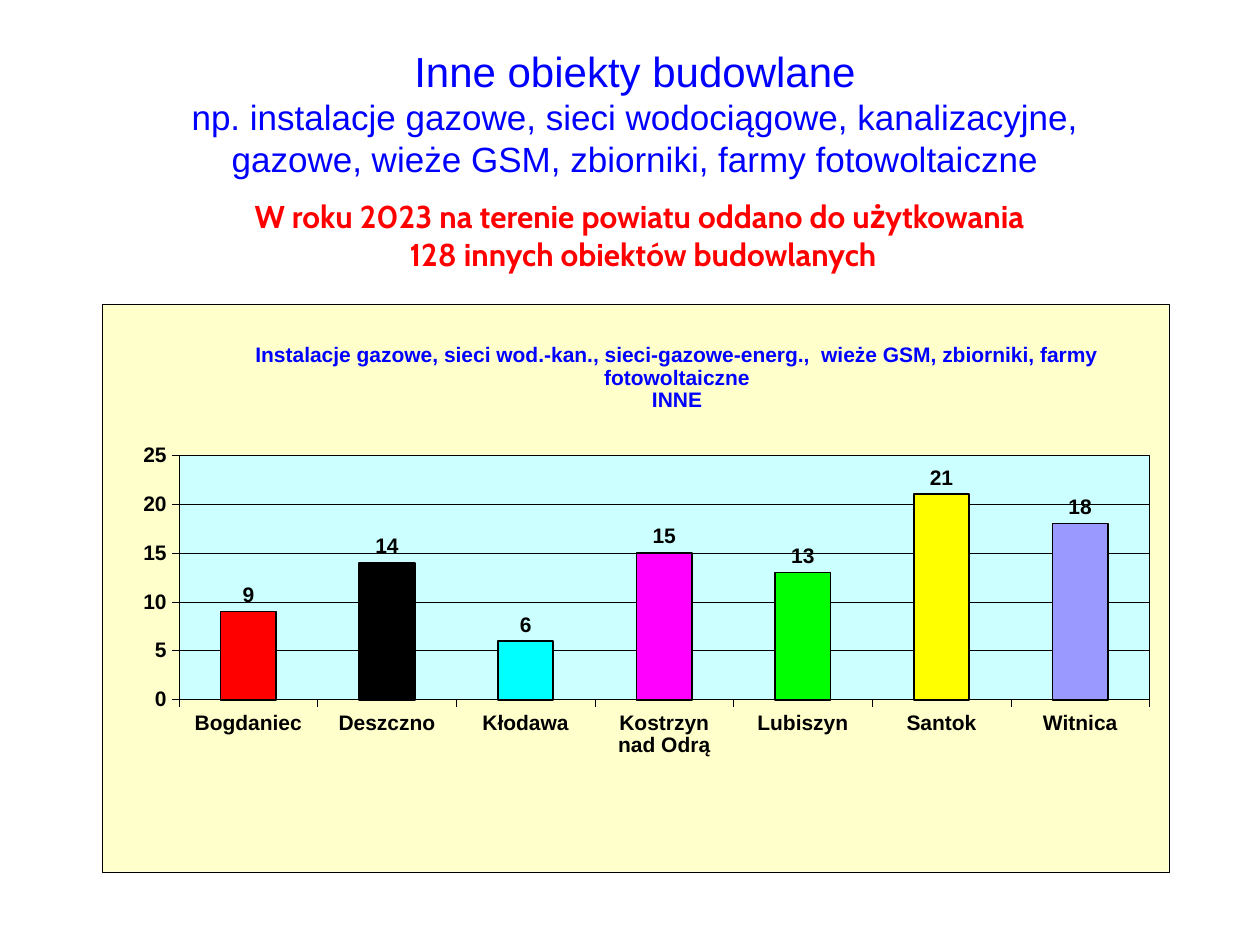
from dataclasses import dataclass

from lxml import etree
from pptx import Presentation
from pptx.chart.data import CategoryChartData
from pptx.dml.color import RGBColor
from pptx.enum.chart import XL_CHART_TYPE, XL_LABEL_POSITION, XL_TICK_MARK
from pptx.enum.text import MSO_ANCHOR, PP_ALIGN
from pptx.oxml import parse_xml
from pptx.oxml.ns import nsdecls, qn
from pptx.util import Pt

COLUMN = XL_CHART_TYPE.COLUMN_CLUSTERED
OUT_END = XL_LABEL_POSITION.OUTSIDE_END
TICK_OUT, TICK_NONE = XL_TICK_MARK.OUTSIDE, XL_TICK_MARK.NONE
MIDDLE, BOTTOM = MSO_ANCHOR.MIDDLE, MSO_ANCHOR.BOTTOM
CENTER = PP_ALIGN.CENTER
SCALE = 914400 / 126


@dataclass(frozen=True)
class Theme:
    sans: str = "Arial"
    accent: str = "Cabin"
    blue: str = "0000FF"
    red: str = "FF0000"
    ink: str = "000000"
    panel: str = "FFFFCC"
    plot: str = "CCFFFF"
    head: int = 24
    sub: int = 20
    title: int = 18
    label: int = 12
    base: int = 10
    hair: float = 0.25
    edge: float = 1


def px(*sizes):
    return [round(size * SCALE) for size in sizes]


def style(font, name, size, color, bold=False):
    font.name, font.size, font.bold = name, Pt(size), bold
    font.color.rgb = RGBColor.from_string(color)


def stroke(line, color, width):
    line.color.rgb = RGBColor.from_string(color)
    line.width = Pt(width)


def fill_xml(fill, line, width):
    return parse_xml(
        f'<c:spPr {nsdecls("c", "a")}>'
        f'<a:solidFill><a:srgbClr val="{fill}"/></a:solidFill>'
        f'<a:ln w="{Pt(width)}"><a:solidFill><a:srgbClr val="{line}"/>'
        '</a:solidFill></a:ln></c:spPr>')


def layout_xml(target=None, **place):
    layout = parse_xml(f'<c:layout {nsdecls("c")}><c:manualLayout/></c:layout>')
    rules = {"layoutTarget": target} if target else {}
    rules |= {"xMode": "edge", "yMode": "edge"} | place
    for tag, val in rules.items():
        etree.SubElement(layout[0], qn(f"c:{tag}")).set("val", str(val))
    return layout


def drop(parent, tag):
    for child in parent.findall(qn(tag)):
        parent.remove(child)


class Deck:
    def __init__(self, theme):
        self.theme = theme
        self.prs = Presentation()
        self.prs.slide_width, self.prs.slide_height = px(1260, 945)
        self.slide = self.prs.slides.add_slide(self.prs.slide_layouts[5])

    def title(self, box, text):
        t, shape = self.theme, self.slide.shapes.title
        shape.left, shape.top, shape.width, shape.height = px(*box)
        frame = shape.text_frame
        frame.text = text
        frame.word_wrap, frame.vertical_anchor = True, MIDDLE
        para = frame.paragraphs[0]
        para.alignment = CENTER
        for run in para.runs:
            style(run.font, t.accent, t.title, t.red, True)

    def text(self, box, lines):
        t = self.theme
        frame = self.slide.shapes.add_textbox(*px(*box)).text_frame
        frame.word_wrap, frame.vertical_anchor = True, BOTTOM
        frame.text = "\n".join(text for text, _ in lines)
        for para, (_, size) in zip(frame.paragraphs, lines):
            para.alignment = CENTER
            style(para.runs[0].font, t.sans, size, t.blue)

    def chart(self, box, heading, rows):
        t = self.theme
        data = CategoryChartData()
        data.categories = [name for name, _, _ in rows]
        data.add_series("Series 1", [val for _, val, _ in rows])
        chart = self.slide.shapes.add_chart(COLUMN, *px(*box), data).chart
        style(chart.font, t.sans, t.base, t.ink)
        chart.has_legend = False
        self.heading(chart, heading)
        self.axes(chart)
        self.bars(chart.plots[0], [color for _, _, color in rows])

        # Panel and plot area
        root = chart.element.find(qn("c:chart"))
        drop(chart.element, "c:spPr")
        root.addnext(fill_xml(t.panel, t.ink, t.hair))
        area = root.find(qn("c:plotArea"))
        drop(area, "c:layout")
        area.insert(0, layout_xml("inner", x=0.072, y=0.266, w=0.91, h=0.431))
        area.append(fill_xml(t.plot, t.ink, t.hair))

    def heading(self, chart, text):
        t = self.theme
        chart.has_title = True
        frame = chart.chart_title.text_frame
        frame.text = text
        for para in frame.paragraphs:
            para.alignment = CENTER
            style(para.runs[0].font, t.sans, t.label, t.blue, True)
        title = chart.element.find(qn("c:chart")).find(qn("c:title"))
        drop(title, "c:layout")
        title.find(qn("c:tx")).addnext(layout_xml(x=0.14, y=0.06))

    def axes(self, chart):
        t = self.theme
        for axis in (chart.category_axis, chart.value_axis):
            style(axis.tick_labels.font, t.sans, t.label, t.ink, True)
            stroke(axis.format.line, t.ink, t.hair)
            axis.major_tick_mark, axis.minor_tick_mark = TICK_OUT, TICK_NONE
        axis.minimum_scale, axis.maximum_scale, axis.major_unit = 0, 25, 5
        axis.has_major_gridlines = True
        stroke(axis.major_gridlines.format.line, t.ink, t.hair)

    def bars(self, plot, colors):
        t = self.theme
        plot.gap_width, plot.vary_by_categories = 150, False
        series = plot.series[0]
        for i, color in enumerate(colors):
            form = series.points[i].format
            form.fill.solid()
            form.fill.fore_color.rgb = RGBColor.from_string(color)
            stroke(form.line, t.ink, t.edge)
        labels = series.data_labels
        labels.show_value, labels.position = True, OUT_END
        style(labels.font, t.sans, t.label, t.ink, True)


def main():
    theme = Theme()
    deck = Deck(theme)

    # Headings
    deck.title((123, 185, 1040, 100),
               "W roku 2023 na terenie powiatu oddano do użytkowania \v"
               "128 innych obiektów budowlanych")
    deck.text((134, 37, 1002, 149), [
        ("Inne obiekty budowlane", theme.head),
        ("np. instalacje gazowe, sieci wodociągowe, kanalizacyjne, "
         "gazowe, wieże GSM, zbiorniki, farmy fotowoltaiczne", theme.sub)])

    # Objects by municipality
    deck.chart(
        (102, 304, 1067, 568),
        "Instalacje gazowe, sieci wod.-kan., sieci-gazowe-energ.,  "
        "wieże GSM, zbiorniki, farmy fotowoltaiczne\nINNE",
        [("Bogdaniec", 9, "FF0000"), ("Deszczno", 14, "000000"),
         ("Kłodawa", 6, "00FFFF"), ("Kostrzyn nad Odrą", 15, "FF00FF"),
         ("Lubiszyn", 13, "00FF00"), ("Santok", 21, "FFFF00"),
         ("Witnica", 18, "9999FF")])
    deck.prs.save("out.pptx")


if __name__ == "__main__":
    main()
